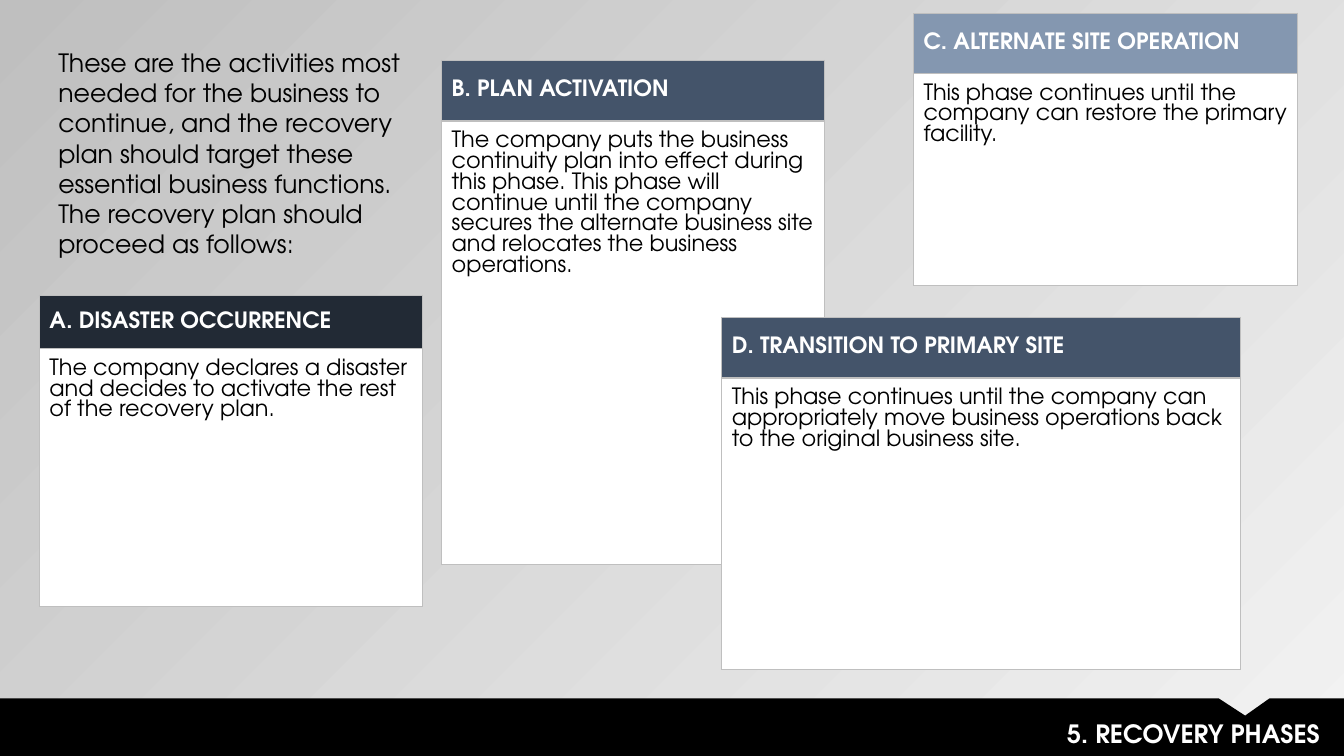
from lxml import etree
from pptx import Presentation
from pptx.dml.color import RGBColor
from pptx.enum.text import MSO_ANCHOR, MSO_AUTO_SIZE, PP_ALIGN
from pptx.oxml.ns import qn
from pptx.util import Inches, Pt

TOP, MIDDLE = MSO_ANCHOR.TOP, MSO_ANCHOR.MIDDLE
LEFT, RIGHT = PP_ALIGN.LEFT, PP_ALIGN.RIGHT

TITLE = "5. RECOVERY PHASES"
INTRO = (
    "These are the activities most needed for the business to continue, and the "
    "recovery plan should target these essential business functions. The recovery "
    "plan should proceed as follows:"
)
# heading, body, heading colour, (left, top, width), (heading height, body height)
PHASES = [
    ("C. ALTERNATE SITE OPERATION",
     "This phase continues until the company can restore the primary facility.",
     "light", (9.06, 0.13, 3.81), (0.6, 2.1)),
    ("B. PLAN ACTIVATION",
     "The company puts the business continuity plan into effect during this phase. "
     "This phase will continue until the company secures the alternate business site "
     "and relocates the business operations.",
     "medium", (4.38, 0.6, 3.8), (0.6, 4.4)),
    ("D. TRANSITION TO PRIMARY SITE",
     "This phase continues until the company can appropriately move business "
     "operations back to the original business site.",
     "medium", (7.16, 3.15, 5.14), (0.6, 2.89)),
    ("A. DISASTER OCCURRENCE",
     "The company declares a disaster and decides to activate the rest of the "
     "recovery plan.",
     "dark", (0.39, 2.93, 3.8), (0.53, 2.56)),
]
# in hundredths of an inch
BAND_OUTLINE = [(0, 693), (1209, 693), (1235, 710), (1259, 693),
                (1333, 693), (1333, 750), (0, 750)]

THEME = {
    "font": "TeX Gyre Adventor",
    "large": 18, "small": 16,
    "black": "000000", "white": "FFFFFF", "border": "BFBFBF",
    "light": "8497B0", "medium": "44546A", "dark": "222A35",
    "background": ("F2F2F2", "BFBFBF"),
}


def rgb(name):
    return RGBColor.from_string(THEME[name])


def set_attributes(target, values):
    for name, value in values.items():
        setattr(target, name, value)


def write(frame, text, size, color, bold=False, alignment=LEFT):
    paragraph = frame.paragraphs[0]
    set_attributes(paragraph, {"alignment": alignment, "line_spacing": 1.0})
    run = paragraph.add_run()
    run.text = text
    set_attributes(run.font, {"name": THEME["font"], "size": Pt(THEME[size]), "bold": bold})
    run.font.color.rgb = rgb(color)


def add_borders(cell):
    properties = cell._tc.get_or_add_tcPr()
    for index, side in enumerate(("a:lnL", "a:lnR", "a:lnT", "a:lnB")):
        line = etree.Element(qn(side), w=str(Pt(1)))
        fill = etree.SubElement(line, qn("a:solidFill"))
        etree.SubElement(fill, qn("a:srgbClr"), val=THEME["border"])
        properties.insert(index, line)


def add_phase(slide, heading, body, heading_color, place, heights):
    left, top, width = map(Inches, place)
    table = slide.shapes.add_table(2, 1, left, top, width, Inches(sum(heights))).table
    rows = [(heading, heading_color, "white", True, MIDDLE),
            (body, "white", "black", False, TOP)]
    for index, (text, fill, color, bold, anchor) in enumerate(rows):
        table.rows[index].height = Inches(heights[index])
        cell = table.cell(index, 0)
        margins = {f"margin_{side}": Inches(0.1) for side in ("left", "right", "top", "bottom")}
        set_attributes(cell, {"vertical_anchor": anchor, **margins})
        cell.fill.solid()
        cell.fill.fore_color.rgb = rgb(fill)
        add_borders(cell)
        write(cell.text_frame, text, "small", color, bold)


def add_band(slide):
    builder = slide.shapes.build_freeform(*BAND_OUTLINE[0], scale=Inches(0.01))
    builder.add_line_segments(BAND_OUTLINE[1:], close=True)
    band = builder.convert_to_shape()
    band.shadow.inherit = False
    band.fill.solid()
    band.fill.fore_color.rgb = rgb("black")
    band.line.fill.background()


def paint_background(slide):
    fill = slide.background.fill
    fill.gradient()
    fill.gradient_angle = 135
    for position, (stop, color) in enumerate(zip(fill.gradient_stops, THEME["background"])):
        stop.position = position
        stop.color.rgb = RGBColor.from_string(color)


def place_title(slide):
    """Fill the title placeholder and bring it in front of the band."""
    title = slide.shapes.title
    set_attributes(title, {"left": Inches(0.24), "top": Inches(7.08),
                           "width": Inches(12.95), "height": Inches(0.4)})
    set_attributes(title.text_frame, {"vertical_anchor": TOP, "word_wrap": True,
                                      "auto_size": MSO_AUTO_SIZE.NONE})
    write(title.text_frame, TITLE, "large", "white", True, RIGHT)
    title.element.getparent().append(title.element)


def main():
    presentation = Presentation()
    set_attributes(presentation, {"slide_width": Inches(13.33), "slide_height": Inches(7.5)})
    slide = presentation.slides.add_slide(presentation.slide_layouts[5])
    paint_background(slide)
    for phase in PHASES:
        add_phase(slide, *phase)
    add_band(slide)
    place_title(slide)
    intro = slide.shapes.add_textbox(*map(Inches, (0.48, 0.42, 3.63, 2.22)))
    intro.text_frame.word_wrap = True
    write(intro.text_frame, INTRO, "large", "black")
    presentation.save("out.pptx")


if __name__ == "__main__":
    main()
